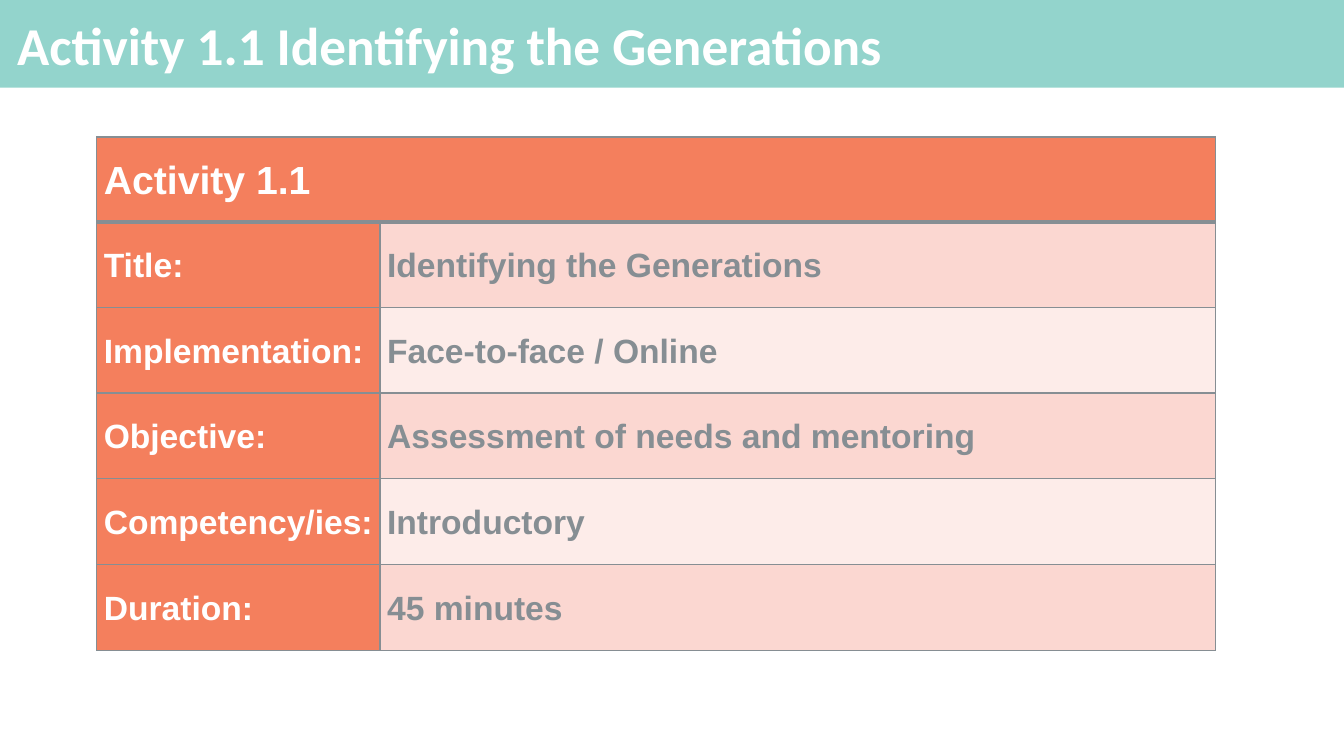
from pptx import Presentation
from pptx.dml.color import RGBColor
from pptx.enum.shapes import MSO_SHAPE
from pptx.enum.text import MSO_ANCHOR, MSO_AUTO_SIZE, PP_ALIGN
from pptx.oxml import parse_xml
from pptx.oxml.ns import nsdecls
from pptx.util import Pt

PX = 9144  # EMU per px, 100 px to the inch

WHITE = RGBColor(0xFF, 0xFF, 0xFF)
TEAL = RGBColor(0x93, 0xD4, 0xCC)
ORANGE = RGBColor(0xF4, 0x7F, 0x5D)
PINK = RGBColor(0xFB, 0xD7, 0xD1)
PALE_PINK = RGBColor(0xFD, 0xEC, 0xE9)
GREY = RGBColor(0x86, 0x8E, 0x93)

SLIDE_W, SLIDE_H = 1333, 750
COLUMN_WIDTHS = (281, 829)
HEADER_H, ROW_H = 84, 85

HEADER = "Activity 1.1"
DETAILS = (
    ("Title:", "Identifying the Generations"),
    ("Implementation:", "Face-to-face / Online"),
    ("Objective:", "Assessment of needs and mentoring"),
    ("Competency/ies:", "Introductory"),
    ("Duration:", "45 minutes"),
)


def px(*lengths):
    return [length * PX for length in lengths]


def style_paragraph(p, font_name, size, color, line_spacing):
    p.alignment = PP_ALIGN.LEFT
    p.line_spacing = line_spacing
    p.font.name = font_name
    p.font.size = Pt(size)
    p.font.bold = True
    p.font.color.rgb = color


def set_margins(target, horizontal, vertical):
    target.margin_left = target.margin_right = horizontal * PX
    target.margin_top = target.margin_bottom = vertical * PX


def add_title(slide, text):
    """Fill the title placeholder and lay a coloured band behind it."""
    title = slide.shapes.title
    title.left, title.top, title.width, title.height = px(11, 9, 1306, 78)
    tf = title.text_frame
    tf.text = text
    tf.word_wrap = True
    tf.auto_size = MSO_AUTO_SIZE.NONE
    tf.vertical_anchor = MSO_ANCHOR.MIDDLE
    set_margins(tf, 6, 6)
    style_paragraph(tf.paragraphs[0], "Calibri", 38, WHITE, 0.9)

    band = slide.shapes.add_shape(MSO_SHAPE.RECTANGLE, *px(0, 0, SLIDE_W, 87))
    band.shadow.inherit = False
    band.fill.solid()
    band.fill.fore_color.rgb = TEAL
    band.line.fill.background()
    title.element.addprevious(band.element)


def set_borders(cell, top=1, bottom=1):
    """Draw grey borders, with top and bottom widths in points."""
    tc_pr = cell._tc.get_or_add_tcPr()
    widths = {"lnL": 1, "lnR": 1, "lnT": top, "lnB": bottom}
    for index, (side, width) in enumerate(widths.items()):
        tc_pr.insert(index, parse_xml(
            f'<a:{side} {nsdecls("a")} w="{Pt(width)}"><a:solidFill>'
            f'<a:srgbClr val="{GREY}"/></a:solidFill></a:{side}>'))


def fill_cell(cell, text, fill, color, size=24):
    cell.text = text
    cell.fill.solid()
    cell.fill.fore_color.rgb = fill
    cell.vertical_anchor = MSO_ANCHOR.MIDDLE
    set_margins(cell, 7, 0)
    style_paragraph(cell.text_frame.paragraphs[0], "Arial", size, color, 1.07)


def add_details_table(slide):
    row_count = len(DETAILS) + 1
    height = HEADER_H + ROW_H * len(DETAILS)
    table = slide.shapes.add_table(
        row_count, 2, *px(96, 136, sum(COLUMN_WIDTHS), height)).table
    for column, width in zip(table.columns, COLUMN_WIDTHS):
        column.width = width * PX
    for index, row in enumerate(table.rows):
        row.height = (ROW_H if index else HEADER_H) * PX
        for cell in row.cells:
            set_borders(cell, top=3 if index == 1 else 1,
                        bottom=1 if index else 3)

    table.cell(0, 0).merge(table.cell(0, 1))
    fill_cell(table.cell(0, 0), HEADER, ORANGE, WHITE, 28)
    for index, (label, value) in enumerate(DETAILS, start=1):
        fill_cell(table.cell(index, 0), label, ORANGE, WHITE)
        shade = PINK if index % 2 else PALE_PINK
        fill_cell(table.cell(index, 1), value, shade, GREY)


def main():
    prs = Presentation()
    prs.slide_width, prs.slide_height = px(SLIDE_W, SLIDE_H)
    title_only = prs.slide_layouts[5]
    slide = prs.slides.add_slide(title_only)
    add_title(slide, "Activity 1.1 Identifying the Generations")
    add_details_table(slide)
    prs.save("out.pptx")


if __name__ == "__main__":
    main()
